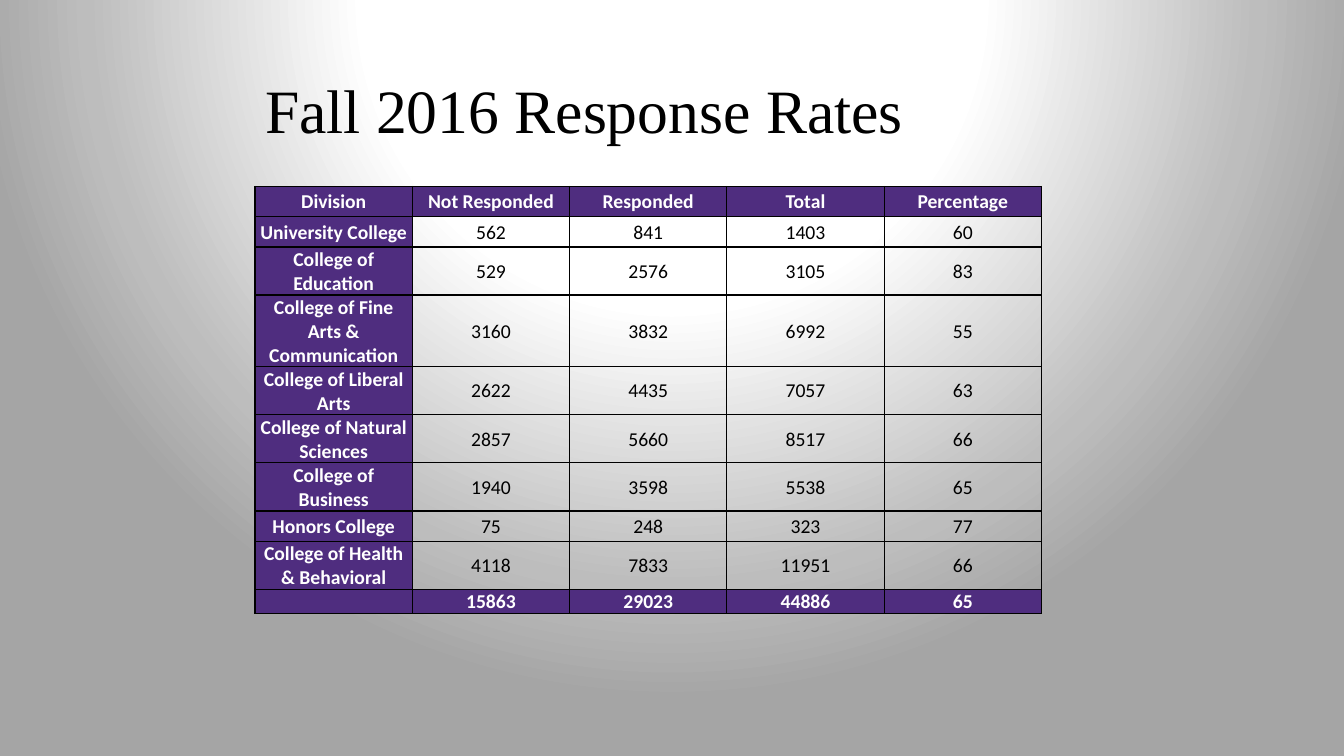
from dataclasses import dataclass

from pptx import Presentation
from pptx.dml.color import RGBColor
from pptx.enum.text import MSO_ANCHOR as Anchor, PP_ALIGN as Align
from pptx.oxml import parse_xml
from pptx.oxml.ns import nsdecls
from pptx.util import Inches, Pt

TITLE = "Fall 2016 Response Rates"
HEADER = ("Division", "Not Responded", "Responded", "Total", "Percentage")
DIVISIONS = [
    ("University College", 562, 841, 1403, 60),
    ("College of Education", 529, 2576, 3105, 83),
    ("College of Fine Arts & Communication", 3160, 3832, 6992, 55),
    ("College of Liberal Arts", 2622, 4435, 7057, 63),
    ("College of Natural Sciences", 2857, 5660, 8517, 66),
    ("College of Business", 1940, 3598, 5538, 65),
    ("Honors College", 75, 248, 323, 77),
    ("College of Health & Behavioral", 4118, 7833, 11951, 66),
]
TOTALS = ("", 15863, 29023, 44886, 65)
ROW_HEIGHTS = (0.3, 0.3, 0.46, 0.68, 0.46, 0.46, 0.3, 0.3, 0.46, 0.23)
COLUMN_WIDTH = 1.56
LEFT, TITLE_TOP, TABLE_TOP = 2.53, 0.4, 1.85


@dataclass(frozen=True)
class Theme:
    purple: str = "4F2D7F"
    black: str = "000000"
    white: str = "FFFFFF"
    backdrop: tuple = ((0, "FFFFFF"), (40, "FFFFFF"), (76, "BDBDBD"), (91, "A5A5A5"))
    title_font: str = "Times New Roman"
    table_font: str = "Calibri"
    title_size: int = 44
    table_size: int = 14
    border: int = 1


THEME = Theme()


def paint_background(page):
    stops = "".join(
        f'<a:gs pos="{place * 1000}"><a:srgbClr val="{color}"/></a:gs>'
        for place, color in THEME.backdrop
    )
    background = parse_xml(
        f'<p:bg {nsdecls("p", "a")}><p:bgPr><a:gradFill rotWithShape="1">'
        f'<a:gsLst>{stops}</a:gsLst><a:path path="circle">'
        '<a:fillToRect l="50000" t="-80000" r="50000" b="180000"/></a:path>'
        "</a:gradFill><a:effectLst/></p:bgPr></p:bg>"
    )
    page.element.cSld.insert(0, background)


def write(para, text, font, size, color, bold=False):
    span = para.add_run()
    span.text = text
    span.font.name = font
    span.font.size = Pt(size)
    span.font.bold = bold
    span.font.color.rgb = RGBColor.from_string(color)


def add_title(page):
    box = page.shapes.add_textbox(
        Inches(LEFT), Inches(TITLE_TOP), Inches(9.88), Inches(1.45)
    )
    frame = box.text_frame
    frame.word_wrap = True
    frame.vertical_anchor = Anchor.MIDDLE
    para = frame.paragraphs[0]
    para.line_spacing = 0.9
    write(para, TITLE, THEME.title_font, THEME.title_size, THEME.black)


def add_borders(cell):
    properties = cell._tc.get_or_add_tcPr()
    for index, side in enumerate(("lnL", "lnR", "lnT", "lnB")):
        line = parse_xml(
            f'<a:{side} {nsdecls("a")} w="{Pt(THEME.border)}"><a:solidFill>'
            f'<a:srgbClr val="{THEME.black}"/></a:solidFill></a:{side}>'
        )
        properties.insert(index, line)


def fill_cell(cell, value, strong):
    cell.margin_left = cell.margin_right = cell.margin_top = Inches(0.01)
    cell.margin_bottom = 0
    cell.vertical_anchor = Anchor.MIDDLE
    if strong:
        cell.fill.solid()
        cell.fill.fore_color.rgb = RGBColor.from_string(THEME.purple)
    else:
        cell.fill.background()
    add_borders(cell)
    para = cell.text_frame.paragraphs[0]
    para.alignment = Align.CENTER
    if value == "":
        para._p.get_or_add_endParaRPr().set("sz", str(THEME.table_size * 100))
    else:
        color = THEME.white if strong else THEME.black
        write(para, str(value), THEME.table_font, THEME.table_size, color, strong)


def add_rates(page):
    rows = [HEADER, *DIVISIONS, TOTALS]
    table = page.shapes.add_table(
        len(rows), len(HEADER), Inches(LEFT), Inches(TABLE_TOP),
        Inches(COLUMN_WIDTH * len(HEADER)), Inches(sum(ROW_HEIGHTS)),
    ).table
    table.first_row = table.horz_banding = False
    for column in table.columns:
        column.width = Inches(COLUMN_WIDTH)
    for row, (values, height) in enumerate(zip(rows, ROW_HEIGHTS)):
        table.rows[row].height = Inches(height)
        for column, value in enumerate(values):
            strong = column == 0 or row in (0, len(rows) - 1)
            fill_cell(table.cell(row, column), value, strong)


def main():
    deck = Presentation()
    deck.slide_width, deck.slide_height = Inches(13.33), Inches(7.5)
    page = deck.slides.add_slide(deck.slide_layouts[6])
    paint_background(page)
    add_title(page)
    add_rates(page)
    deck.save("out.pptx")


if __name__ == "__main__":
    main()
